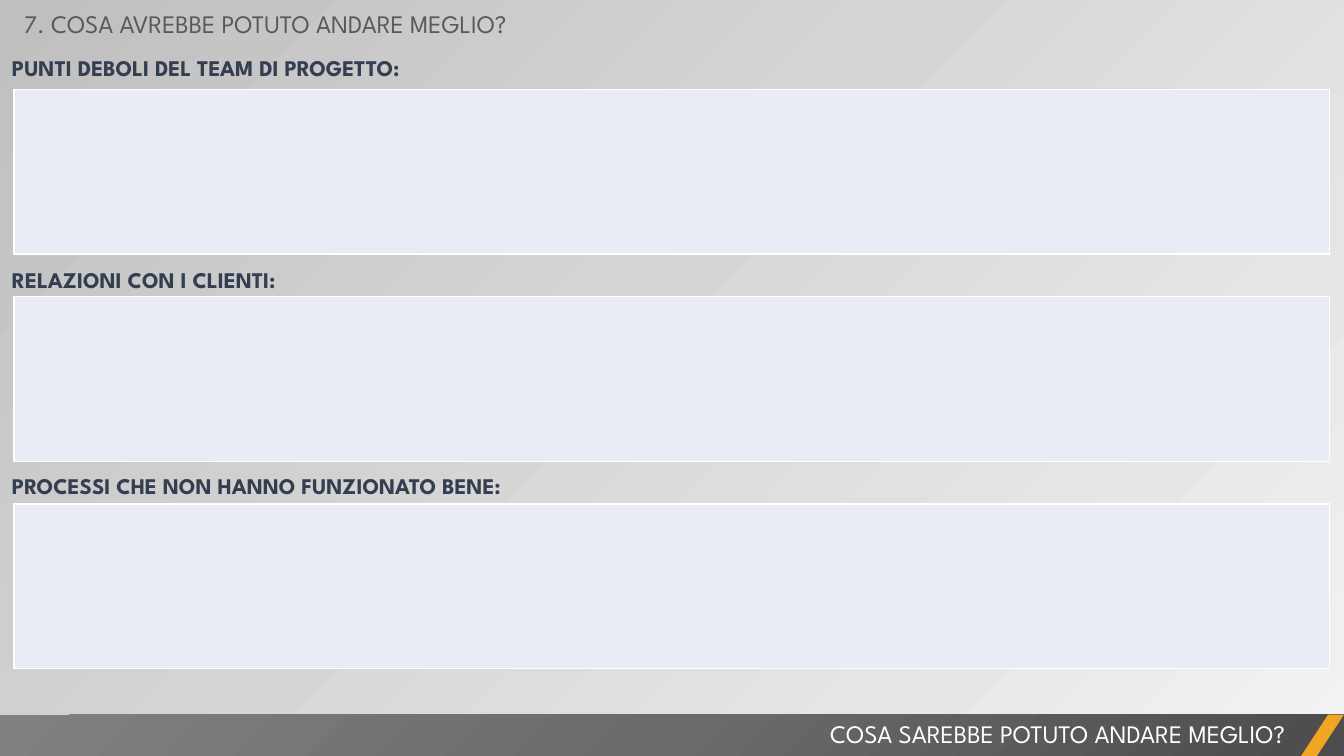
from lxml import etree
from pptx import Presentation
from pptx.dml.color import RGBColor
from pptx.enum.shapes import MSO_SHAPE
from pptx.enum.text import MSO_ANCHOR, MSO_AUTO_SIZE, PP_ALIGN
from pptx.oxml import parse_xml
from pptx.oxml.ns import nsdecls, qn
from pptx.util import Pt

RECT, SLANT = MSO_SHAPE.RECTANGLE, MSO_SHAPE.PARALLELOGRAM
TOP, FIXED = MSO_ANCHOR.TOP, MSO_AUTO_SIZE.NONE
LEFT, RIGHT = PP_ALIGN.LEFT, PP_ALIGN.RIGHT

FONT = "League Spartan"
GREY = RGBColor(0x59, 0x59, 0x59)
NAVY = RGBColor(0x33, 0x3F, 0x50)
WHITE = RGBColor(0xFF, 0xFF, 0xFF)
PALE = RGBColor(0xE9, 0xEB, 0xF5)
AMBER = RGBColor(0xF0, 0xA6, 0x22)
LIGHT = RGBColor(0xF2, 0xF2, 0xF2)
SILVER = RGBColor(0xBF, 0xBF, 0xBF)
BAR = [(0, RGBColor(0x4C, 0x4C, 0x4C)), (50, RGBColor(0x6B, 0x6B, 0x6B)),
       (100, RGBColor(0x80, 0x80, 0x80))]

TITLE = "7. COSA AVREBBE POTUTO ANDARE MEGLIO?"
FOOTER = "COSA SAREBBE POTUTO ANDARE MEGLIO?"
# heading, its top, line spacing
PARTS = [
    ("PUNTI DEBOLI DEL TEAM DI PROGETTO:", 32.4, Pt(21.5)),
    ("RELAZIONI CON I CLIENTI:", 183.6, Pt(21.5)),
    ("PROCESSI CHE NON HANNO FUNZIONATO BENE:", 329, 1.2),
]

WIDE, HIGH = 960, 540
BOX_X, BOX_Y, BOX_W, BOX_H = 10, 64, 939.6, 117.4
STEP = 148
BAR_Y, BAR_H = 510.4, 30.2
SLANT_W = 31


def place(*box):
    return [Pt(v) for v in box]


def write(shape, text, size, color, bold=False, align=LEFT):
    frame = shape.text_frame
    frame.text = text
    frame.word_wrap = True
    frame.auto_size = FIXED
    frame.vertical_anchor = TOP
    para = frame.paragraphs[0]
    para.alignment = align
    font = para.runs[0].font
    font.name, font.size, font.bold = FONT, Pt(size), bold
    font.color.rgb = color
    return frame


def add_box(slide, top):
    """Add an empty one-cell answer table with a white border."""
    frame = slide.shapes.add_table(1, 1, *place(BOX_X, top, BOX_W, BOX_H))
    table = frame.table
    table.first_row = table.horz_banding = False
    cell = table.cell(0, 0)
    cell.fill.solid()
    cell.fill.fore_color.rgb = PALE
    props = cell._tc.get_or_add_tcPr()
    for i, side in enumerate("LRTB"):
        props.insert(i, parse_xml(
            f'<a:ln{side} {nsdecls("a")} w="12700"><a:solidFill>'
            f'<a:srgbClr val="{WHITE}"/></a:solidFill></a:ln{side}>'))


def add_block(slide, kind, *box):
    shape = slide.shapes.add_shape(kind, *place(*box))
    shape.shadow.inherit = False
    shape.line.fill.background()
    return shape


def glow(shape, stops):
    """Fill a shape with a round gradient centred on its lower right corner."""
    shape.fill.gradient()
    grad = shape._element.spPr.find(qn("a:gradFill"))
    for child in list(grad):
        grad.remove(child)
    group = etree.SubElement(grad, qn("a:gsLst"))
    for pos, color in stops:
        stop = etree.SubElement(group, qn("a:gs"), pos=str(pos * 1000))
        etree.SubElement(stop, qn("a:srgbClr"), val=str(color))
    route = etree.SubElement(grad, qn("a:path"), path="circle")
    etree.SubElement(route, qn("a:fillToRect"), l="100000", t="100000")


def main():
    deck = Presentation()
    deck.slide_width, deck.slide_height = Pt(WIDE), Pt(HIGH)
    slide = deck.slides.add_slide(deck.slide_layouts[5])

    fill = slide.background.fill
    fill.gradient()
    fill.gradient_angle = 135
    for stop, pos, color in zip(fill.gradient_stops, (0, 1), (LIGHT, SILVER)):
        stop.position = pos
        stop.color.rgb = color

    title = slide.shapes.title
    title.left, title.top, title.width, title.height = place(10, 2.2, 492.5, 29)
    write(title, TITLE, 18, GREY)

    for i, (text, top, gap) in enumerate(PARTS):
        add_box(slide, BOX_Y + i * STEP)
        head = slide.shapes.add_textbox(*place(0, top, 549.4, 29))
        frame = write(head, text, 16, NAVY, bold=True)
        frame.margin_left = frame.margin_right = Pt(8.6)
        frame.margin_top = frame.margin_bottom = Pt(4.3)
        para = frame.paragraphs[0]
        para.line_spacing, para.space_before = gap, Pt(3.2)

    glow(add_block(slide, RECT, 0, BAR_Y, WIDE, BAR_H), BAR)
    foot = slide.shapes.add_textbox(*place(378, 509.8, 547.2, 29))
    write(foot, FOOTER, 18, WHITE, align=RIGHT)
    slant = add_block(slide, SLANT, WIDE - SLANT_W, BAR_Y, SLANT_W, BAR_H)
    slant.adjustments[0] = 0.652
    slant.fill.solid()
    slant.fill.fore_color.rgb = AMBER

    deck.save("out.pptx")


if __name__ == "__main__":
    main()
